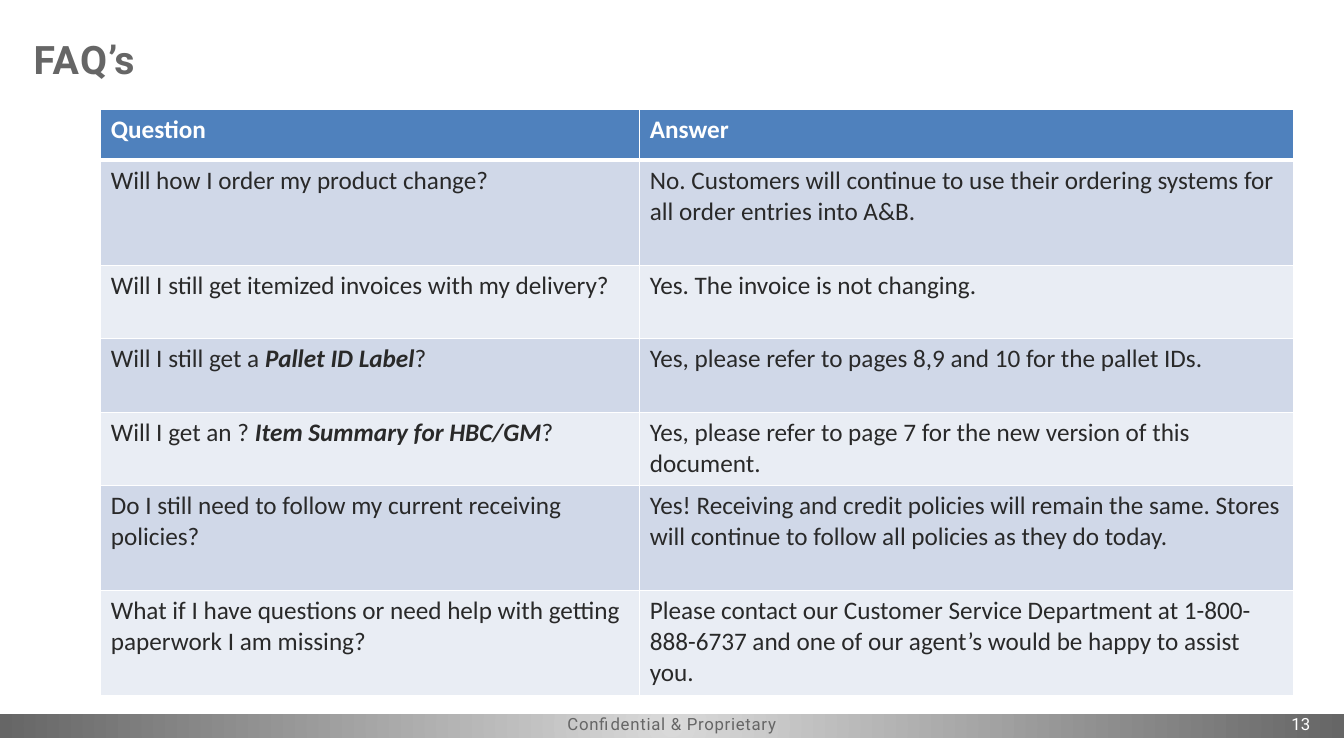
"""Build the FAQ slide: title, question and answer table, footer band."""
from pptx import Presentation
from pptx.dml.color import RGBColor
from pptx.enum.shapes import MSO_SHAPE as Shape
from pptx.enum.text import MSO_ANCHOR as Anchor, PP_ALIGN as Align
from pptx.oxml import parse_xml
from pptx.oxml.ns import nsdecls
from pptx.util import Pt

SLIDE_SIZE = (960, 540)
GREY, LIGHT_GREY, WHITE, INK = "666666", "D9D9D9", "FFFFFF", "292929"
HEADER_FILL, BAND_FILLS = "4F81BD", ("D0D8E8", "E9EDF4")

TITLE = {"text": "FAQ’s", "box": (24, 21, 786, 43), "insets": (3.6, 3.6), "spacing": 1,
         "align": Align.LEFT, "line": 32, "size": 28, "color": GREY, "bold": True}
FOOTER = {"text": "Confidential & Proprietary", "box": (318, 507, 324, 24),
          "insets": (7.2, 10.8), "spacing": 0.5, "align": Align.CENTER,
          "line": None, "size": 12, "color": GREY, "bold": False}
PAGE_NUMBER = FOOTER | {"text": "13", "box": (712, 507, 224, 24), "spacing": 0,
                        "align": Align.RIGHT, "color": WHITE}
FOOTER_BAND = (0, 510, 960, 16.8)

TABLE_ORIGIN = (72, 78)
COLUMN_WIDTHS = (385, 467)
HEADER_HEIGHT, SHORT_ROW, TALL_ROW = 36.5, 52.5, 75
HEADINGS = ("Question", "Answer")
FAQS = [
    (TALL_ROW, ["Will how I order my product change?"],
     ["No. Customers will continue to use their ordering systems for all order entries into A&B."]),
    (SHORT_ROW, ["Will I still get itemized invoices with my delivery?"],
     ["Yes. The invoice is not changing."]),
    (SHORT_ROW, ["Will I still get a ", "Pallet ID Label", "?"],
     ["Yes, please refer to pages 8,9 and 10 for the pallet IDs."]),
    (SHORT_ROW, ["Will I get an ?", " Item Summary for HBC/GM", "?"],
     ["Yes, please refer to page 7 for the new version of this document."]),
    (TALL_ROW, ["Do I still need to follow my current receiving policies?"],
     ["Yes! Receiving and credit policies will remain the same. "
      "Stores will continue to follow all policies as they do today."]),
    (TALL_ROW, ["What if I have questions or need help with getting paperwork I am missing?"],
     ["Please contact our Customer Service Department at 1-800-888-6737 "
      "and one of our agent’s would be happy to assist you."]),
]


def rgb(color):
    return RGBColor.from_string(color)


def set_all(target, values):
    for name, value in values.items():
        setattr(target, name, value)


def add_run(paragraph, text, font, size, color, bold=False, italic=False):
    run = paragraph.add_run()
    run.text = text
    set_all(run.font, {"name": font, "size": Pt(size), "bold": bold, "italic": italic})
    run.font.color.rgb = rgb(color)
    return run


def add_footer_band(slide):
    band = slide.shapes.add_shape(Shape.RECTANGLE, *map(Pt, FOOTER_BAND))
    band.shadow.inherit = False
    band.line.fill.background()
    band.fill.gradient()
    gradient = parse_xml(
        f'<a:gradFill {nsdecls("a")} rotWithShape="1"><a:gsLst>'
        f'<a:gs pos="0"><a:srgbClr val="{LIGHT_GREY}"/></a:gs>'
        f'<a:gs pos="100000"><a:srgbClr val="{GREY}"/></a:gs></a:gsLst>'
        '<a:path path="circle"><a:fillToRect l="50000" t="50000" r="50000" b="50000"/>'
        '</a:path></a:gradFill>')
    properties = band._element.spPr
    properties.replace(properties.find(gradient.tag), gradient)


def add_label(slide, label):
    frame = slide.shapes.add_textbox(*map(Pt, label["box"])).text_frame
    top, bottom = map(Pt, label["insets"])
    set_all(frame, {"word_wrap": True, "vertical_anchor": Anchor.MIDDLE, "margin_left": 0,
                    "margin_right": 0, "margin_top": top, "margin_bottom": bottom})
    paragraph = frame.paragraphs[0]
    paragraph.alignment = label["align"]
    if label["line"]:
        paragraph.line_spacing = Pt(label["line"])
    run = add_run(paragraph, label["text"], "Roboto", label["size"], label["color"], label["bold"])
    run._r.get_or_add_rPr().set("spc", str(int(label["spacing"] * 100)))


def style_cell(cell, fill, widths):
    properties = cell._tc.get_or_add_tcPr()
    for side, width in zip("LRTB", widths):
        properties.append(parse_xml(
            f'<a:ln{side} {nsdecls("a")} w="{Pt(width)}"><a:solidFill>'
            f'<a:srgbClr val="{WHITE}"/></a:solidFill></a:ln{side}>'))
    cell.fill.solid()
    cell.fill.fore_color.rgb = rgb(fill)


def add_faq_table(slide):
    rows = [(HEADER_HEIGHT, *([heading] for heading in HEADINGS)), *FAQS]
    size = (sum(COLUMN_WIDTHS), sum(row[0] for row in rows))
    table = slide.shapes.add_table(len(rows), len(HEADINGS),
                                   *map(Pt, TABLE_ORIGIN + size)).table
    for column, width in zip(table.columns, COLUMN_WIDTHS):
        column.width = Pt(width)
    for row_index, (height, *texts) in enumerate(rows):
        header = row_index == 0
        table.rows[row_index].height = Pt(height)
        fill = HEADER_FILL if header else BAND_FILLS[(row_index - 1) % 2]
        widths = (1, 1, 3 if row_index == 1 else 1, 3 if header else 1)
        for column_index, pieces in enumerate(texts):
            cell = table.cell(row_index, column_index)
            style_cell(cell, fill, widths)
            for piece_index, piece in enumerate(pieces):
                emphasis = piece_index == 1
                add_run(cell.text_frame.paragraphs[0], piece, "Calibri", 18,
                        WHITE if header else INK, header or emphasis, emphasis)


def main():
    presentation = Presentation()
    presentation.slide_width, presentation.slide_height = map(Pt, SLIDE_SIZE)
    slide = presentation.slides.add_slide(presentation.slide_layouts[6])
    add_footer_band(slide)
    for label in (TITLE, FOOTER, PAGE_NUMBER):
        add_label(slide, label)
    add_faq_table(slide)
    presentation.save("out.pptx")


if __name__ == "__main__":
    main()
